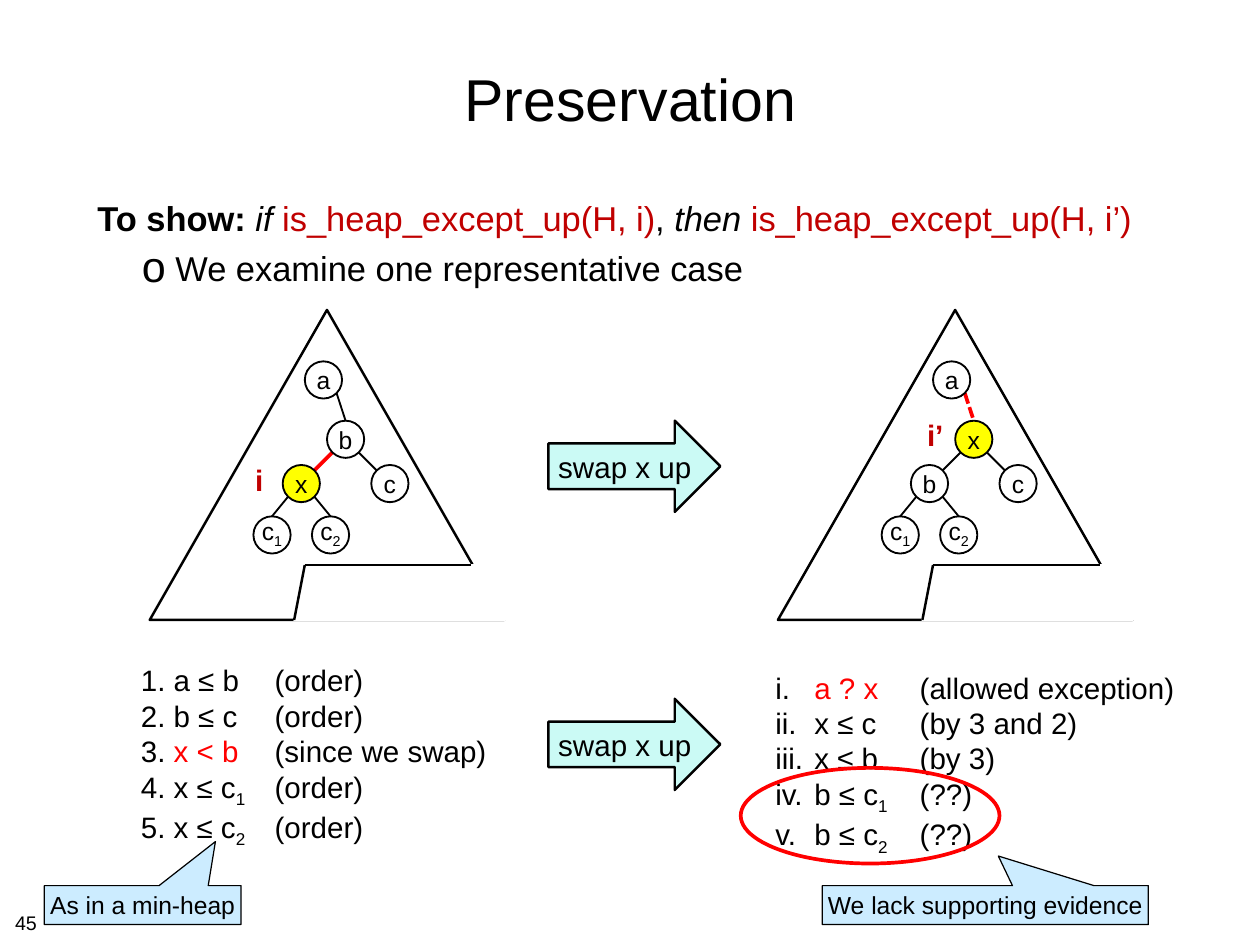
from math import cos, radians, sin

from lxml import etree
from pptx import Presentation
from pptx.dml.color import RGBColor
from pptx.enum.dml import MSO_LINE
from pptx.enum.shapes import MSO_CONNECTOR, MSO_SHAPE
from pptx.enum.text import MSO_ANCHOR, MSO_AUTO_SIZE, PP_ALIGN
from pptx.oxml.ns import qn
from pptx.util import Inches, Pt

BLACK = RGBColor(0x00, 0x00, 0x00)
WHITE = RGBColor(0xFF, 0xFF, 0xFF)
RED = RGBColor(0xFF, 0x00, 0x00)
DARK_RED = RGBColor(0xC0, 0x00, 0x00)
YELLOW = RGBColor(0xFF, 0xFF, 0x00)
MINT = RGBColor(0xCB, 0xFA, 0xF5)
SKY = RGBColor(0xCC, 0xEC, 0xFF)

ELLIPSE = MSO_SHAPE.OVAL
TRIANGLE = MSO_SHAPE.ISOSCELES_TRIANGLE
RECTANGLE = MSO_SHAPE.RECTANGLE
ARROW = MSO_SHAPE.RIGHT_ARROW
CALLOUT = MSO_SHAPE.RECTANGULAR_CALLOUT
STRAIGHT = MSO_CONNECTOR.STRAIGHT
SHORT_DASH = MSO_LINE.SQUARE_DOT
CENTER, LEFT = PP_ALIGN.CENTER, PP_ALIGN.LEFT
MIDDLE, TOP = MSO_ANCHOR.MIDDLE, MSO_ANCHOR.TOP
GROW, FIXED = MSO_AUTO_SIZE.SHAPE_TO_FIT_TEXT, MSO_AUTO_SIZE.NONE

# The grid has columns and rows of one inch.
COLUMNS, ROWS = 14.22, 10.67
FONT = "Arial"
INSETS = (0.06,) * 4
TREE_STEP = 7.09
NODE = 0.42
NODE_PLACES = {
    "root": (3.44, 4.08),
    "child": (3.69, 4.75),
    "left": (3.19, 5.25),
    "right": (4.19, 5.25),
    "left leaf": (2.86, 5.83),
    "right leaf": (3.52, 5.83),
}
# Angles run clockwise from the right-hand side of a node.
EDGES = [
    ("root", 45, "child", 270),
    ("child", 135, "left", 315),
    ("child", 45, "right", 225),
    ("left", 135, "left leaf", 270),
    ("left", 45, "right leaf", 270),
]


def cells(*counts):
    return [Inches(count) for count in counts]


def add_run(paragraph, text, size, color=BLACK, bold=False, italic=False, subscript=False):
    run = paragraph.add_run()
    run.text = text
    font = run.font
    font.name, font.size, font.bold, font.italic = FONT, Pt(size), bold, italic
    font.color.rgb = color
    if subscript:
        run._r.get_or_add_rPr().set("baseline", "-25000")


def format_frame(frame, insets=INSETS, anchor=TOP, wrap=False, auto_size=FIXED):
    frame.margin_left, frame.margin_top, frame.margin_right, frame.margin_bottom = cells(*insets)
    frame.vertical_anchor, frame.word_wrap, frame.auto_size = anchor, wrap, auto_size


def format_bullet(paragraph, indent, hanging, kind, attributes, percent=100, tab=None):
    """Give a paragraph a hanging bullet or number and an optional tab stop."""
    properties = paragraph._p.get_or_add_pPr()
    properties.set("marL", str(Inches(indent)))
    properties.set("indent", str(-Inches(hanging)))
    color = etree.SubElement(properties, qn("a:buClr"))
    etree.SubElement(color, qn("a:srgbClr"), val=str(BLACK))
    etree.SubElement(properties, qn("a:buSzPct"), val=str(percent * 1000))
    etree.SubElement(properties, qn("a:buFont"), typeface=FONT)
    etree.SubElement(properties, qn(kind), **attributes)
    if tab:
        stops = etree.SubElement(properties, qn("a:tabLst"))
        etree.SubElement(stops, qn("a:tab"), pos=str(Inches(tab)), algn="l")


def add_shape(slide, preset, place, line_width, fill=None, line=BLACK):
    shape = slide.shapes.add_shape(preset, *cells(*place))
    shape.shadow.inherit = False
    if fill is None:
        shape.fill.background()
    else:
        shape.fill.solid()
        shape.fill.fore_color.rgb = fill
    shape.line.color.rgb = line
    shape.line.width = Pt(line_width)
    return shape


def add_line(slide, start, end, width, color=BLACK, dash=None):
    line = slide.shapes.add_connector(STRAIGHT, *cells(*start, *end))
    line.line.color.rgb = color
    line.line.width = Pt(width)
    line.line.dash_style = dash
    etree.SubElement(line._element.spPr, qn("a:effectLst"))


def write_label(shape, text, size, insets, subscript="", auto_size=FIXED):
    format_frame(shape.text_frame, insets, MIDDLE, auto_size=auto_size)
    paragraph = shape.text_frame.paragraphs[0]
    paragraph.alignment = CENTER
    add_run(paragraph, text, size)
    if subscript:
        add_run(paragraph, subscript, size, subscript=True)


def add_text_box(slide, place, **frame_format):
    frame = slide.shapes.add_textbox(*cells(*place)).text_frame
    format_frame(frame, **frame_format)
    return frame


def add_outline(slide, shift):
    """Draw a heap's triangle with its unfilled bottom-right corner."""
    corner_top, corner_left, bottom = 6.38, 3.32 + shift, 7
    notch = (3.44 + shift, corner_top)
    add_shape(slide, TRIANGLE, (1.69 + shift, 3.5, 4, 3.5), 2)
    add_shape(slide, RECTANGLE, (corner_left, corner_top, 2.38, 0.62), 2, WHITE, WHITE)
    add_line(slide, notch, (5.32 + shift, corner_top), 2)
    add_line(slide, notch, (corner_left, bottom), 2)


def add_tree(slide, shift, labels, red_edge, dash=None):
    def rim(name, angle):
        left, top = NODE_PLACES[name]
        radius = NODE / 2
        return (left + shift + radius + radius * cos(radians(angle)),
                top + radius + radius * sin(radians(angle)))

    add_outline(slide, shift)
    for upper, upper_angle, lower, lower_angle in EDGES:
        ends = rim(upper, upper_angle), rim(lower, lower_angle)
        if (upper, lower) == red_edge:
            add_line(slide, *ends, 3, RED, dash)
        else:
            add_line(slide, *ends, 1.5)
    for (left, top), label in zip(NODE_PLACES.values(), labels):
        letter, subscript = label[0], label[1:]
        node = add_shape(slide, ELLIPSE, (left + shift, top, NODE, NODE), 1.5,
                         YELLOW if letter == "x" else None)
        write_label(node, letter, 20, (0, 0, 0, 0.05 if subscript else 0), subscript)


def add_index(slide, place, text):
    frame = add_text_box(slide, place, insets=(0.1, 0.05, 0.1, 0.05), auto_size=GROW)
    frame.paragraphs[0].alignment = CENTER
    add_run(frame.paragraphs[0], text, 24, DARK_RED, bold=True)


def add_facts(slide, place, numbering, hanging, tab, facts):
    frame = add_text_box(slide, place, wrap=True)
    for number, (claim, subscript, reason, color) in enumerate(facts):
        paragraph = frame.add_paragraph() if number else frame.paragraphs[0]
        format_bullet(paragraph, hanging, hanging, "a:buAutoNum", {"type": numbering}, tab=tab)
        add_run(paragraph, claim, 24, color)
        if subscript:
            add_run(paragraph, subscript, 24, subscript=True)
        add_run(paragraph, "\t" + reason, 24)


def add_callout(slide, place, tip, text):
    callout = add_shape(slide, CALLOUT, place, 1, SKY)
    callout.adjustments[0], callout.adjustments[1] = tip
    write_label(callout, text, 20, (0.05,) * 4, auto_size=GROW)


def add_title(slide, text):
    title = slide.shapes.title
    title.left, title.top, title.width, title.height = cells(1.04, 0.28, 12.15, 1.64)
    format_frame(title.text_frame, anchor=MIDDLE, wrap=True)
    title.text_frame.paragraphs[0].alignment = CENTER
    add_run(title.text_frame.paragraphs[0], text, 48)


def add_claim(slide):
    frame = add_text_box(slide, (1.04, 2.17, 12.15, 1.3), wrap=True)
    claim, case = frame.paragraphs[0], frame.add_paragraph()
    claim.space_before, case.space_before = Pt(8), Pt(7)
    add_run(claim, "To show: ", 28, bold=True)
    add_run(claim, "if ", 28, italic=True)
    add_run(claim, "is_heap_except_up(H, i)", 28, DARK_RED)
    add_run(claim, ", ", 28)
    add_run(claim, "then ", 28, italic=True)
    add_run(claim, "is_heap_except_up(H, i’)", 28, DARK_RED)
    case.level = 1
    format_bullet(case, 0.88, 0.38, "a:buChar", {"char": "o"}, percent=125)
    add_run(case, "We examine one representative case", 28)


def main():
    presentation = Presentation()
    presentation.slide_width, presentation.slide_height = cells(COLUMNS, ROWS)
    slide = presentation.slides.add_slide(presentation.slide_layouts[5])
    add_title(slide, "Preservation")
    add_claim(slide)
    add_tree(slide, 0, ["a", "b", "x", "c", "c1", "c2"], ("child", "left"))
    add_tree(slide, TREE_STEP, ["a", "x", "b", "c", "c1", "c2"], ("root", "child"), SHORT_DASH)
    add_index(slide, (2.78, 5.17, 0.29, 0.5), "i")
    add_index(slide, (10.36, 4.66, 0.39, 0.5), "i’")
    for top in (4.75, 7.89):
        arrow = add_shape(slide, ARROW, (6.19, top, 1.94, 1.03), 2, MINT)
        write_label(arrow, "swap x up", 24, (0.1, 0.06, 0.06, 0.06))
    add_facts(slide, (1.53, 7.42, 4.67, 2.67), "arabicPeriod", 0.37, 1.51, [
        ("a ≤ b", "", "(order)", BLACK),
        ("b ≤ c", "", "(order)", BLACK),
        ("x < b", "", "(since we swap)", RED),
        ("x ≤ c", "1", "(order)", BLACK),
        ("x ≤ c", "2", "(order)", BLACK),
    ])
    add_facts(slide, (8.69, 7.5, 5.08, 2.21), "romanLcPeriod", 0.44, 1.63, [
        ("a ? x", "", "(allowed exception)", RED),
        ("x ≤ c", "", "(by 3 and 2)", BLACK),
        ("x ≤ b", "", "(by 3)", BLACK),
        ("b ≤ c", "1", "(??)", BLACK),
        ("b ≤ c", "2", "(??)", BLACK),
    ])
    add_callout(slide, (0.5, 10, 2.22, 0.44), (0.37, -1.63), "As in a min-heap")
    add_shape(slide, ELLIPSE, (8.36, 8.67, 2.92, 1.08), 3, line=RED)
    add_callout(slide, (9.28, 10, 3.68, 0.44), (0.04, -1.26), "We lack supporting evidence")
    page_number = add_text_box(slide, (0.11, 10.23, 0.37, 0.35))
    add_run(page_number.paragraphs[0], "45", 16)
    presentation.save("out.pptx")


if __name__ == "__main__":
    main()
